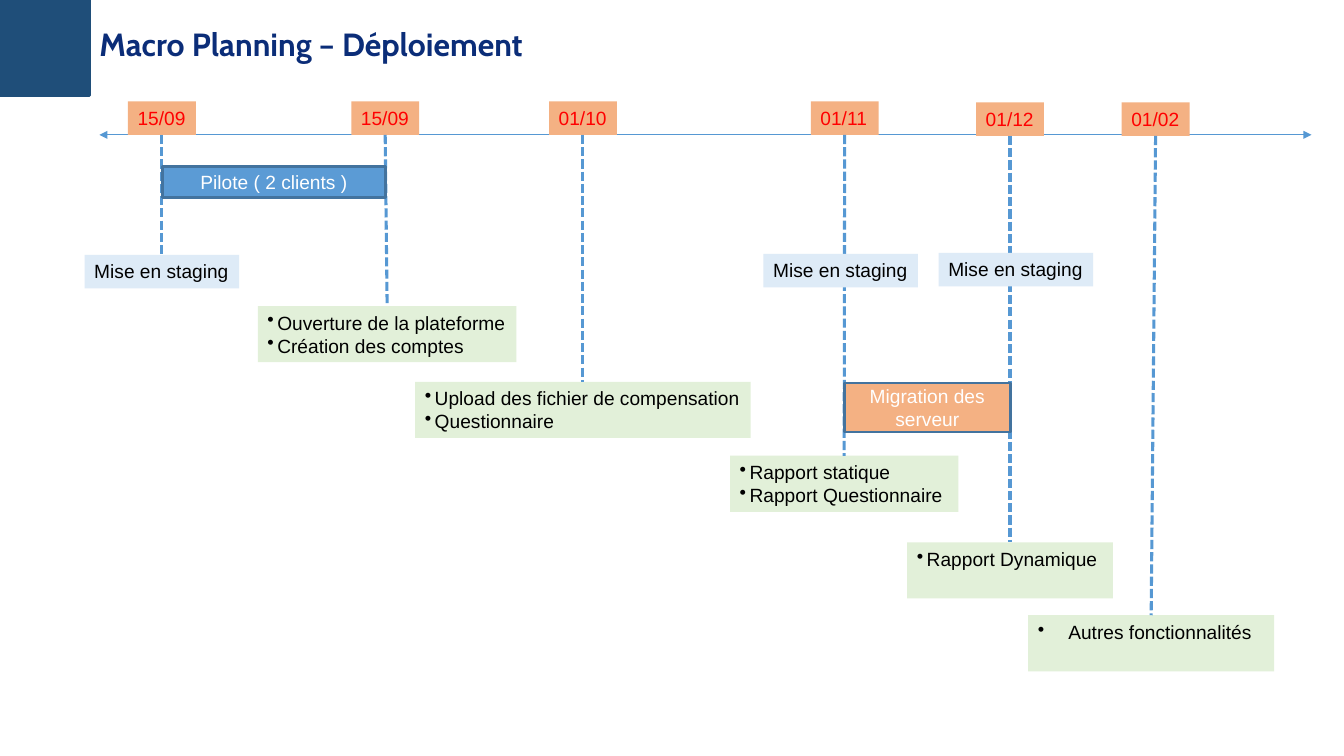
from pptx import Presentation
from pptx import util as u
from pptx.dml.color import RGBColor
from pptx.enum import dml, shapes, text
from pptx.oxml.ns import qn
from lxml import etree

BLUE, ORANGE, GREEN, PALE = "5698D3", "F4B183", "E2F0D9", "DEEBF7"
BLACK, WHITE, RED = "000000", "FFFFFF", "FF0000"

# date, left, top, note left, note top, note width, note lines, bullet indent
STEPS = [
    ("15/09", 1.3, 1.03, 0.86, 2.59, 1.57, ["Mise en staging"], 0),
    ("01/10", 5.58, 1.03, 4.22, 3.88, 3.41,
     ["Upload des fichier de compensation", "Questionnaire"], 0.1),
    ("15/09", 3.57, 1.03, 2.62, 3.11, 2.63,
     ["Ouverture de la plateforme", "Création des comptes"], 0.1),
    ("01/11", 8.24, 1.03, 7.42, 4.63, 2.32,
     ["Rapport statique", "Rapport Questionnaire"], 0.1),
    ("01/12", 9.92, 1.04, 9.22, 5.51, 2.09, ["Rapport Dynamique"], 0.1),
    ("01/02", 11.4, 1.04, 10.45, 6.25, 2.5, ["Autres fonctionnalités"], 0.31),
]
BARS = [
    ("Pilote ( 2 clients )", 1.65, 1.69, 2.27, 0.32, "5B9BD5"),
    ("Migration des serveur", 8.58, 3.89, 1.69, 0.5, ORANGE),
]
STAGING = [(7.76, 2.58), (9.54, 2.57)]


def rgb(code):
    """Turn a hex string into a colour."""
    return RGBColor.from_string(code)


def style(para, size, color, face="Arial", bold=False):
    """Format the runs of a paragraph."""
    for run in para.runs:
        font = run.font
        font.size, font.name, font.bold = u.Pt(size), face, bold
        font.color.rgb = rgb(color)


def bullet(para, indent):
    """Give a paragraph a hanging bullet."""
    props = para._p.get_or_add_pPr()
    props.set("marL", str(u.Inches(indent)))
    props.set("indent", str(-u.Inches(indent)))
    etree.SubElement(props, qn("a:buChar")).set("char", "•")


def rect(slide, box, fill, edge=None):
    """Add a plain rectangle with an optional edge."""
    shape = slide.shapes.add_shape(
        shapes.MSO_SHAPE.RECTANGLE, *map(u.Inches, box))
    shape.shadow.inherit = False
    shape.fill.solid()
    shape.fill.fore_color.rgb = rgb(fill)
    if edge:
        shape.line.color.rgb = rgb(edge)
        shape.line.width = u.Pt(2)
    else:
        shape.line.fill.background()
    return shape


def label(slide, box, fill, lines, color, indent=0):
    """Add a left-aligned box of text lines, bulleted when indented."""
    shape = rect(slide, box, fill)
    frame = shape.text_frame
    frame.word_wrap = True
    frame.margin_right = 0
    frame.vertical_anchor = text.MSO_ANCHOR.TOP
    frame.text = "\n".join(lines)
    for para in frame.paragraphs:
        para.alignment = text.PP_ALIGN.LEFT
        style(para, 14, color)
        if indent:
            bullet(para, indent)
    return shape


def bar(slide, words, left, top, width, height, fill):
    """Add a period bar with centred text."""
    shape = rect(slide, (left, top, width, height), fill, "43739E")
    frame = shape.text_frame
    frame.text = words
    frame.vertical_anchor = text.MSO_ANCHOR.MIDDLE
    frame.paragraphs[0].alignment = text.PP_ALIGN.CENTER
    style(frame.paragraphs[0], 14, WHITE)


def link(slide, ends, width):
    """Add a straight blue line without shadow."""
    line = slide.shapes.add_connector(
        shapes.MSO_CONNECTOR.STRAIGHT, *map(u.Inches, ends))
    line.line.color.rgb = rgb(BLUE)
    line.line.width = u.Pt(width)
    etree.SubElement(line._element.spPr, qn("a:effectLst"))
    return line


def axis(slide):
    """Add the time axis with an arrowhead at each end."""
    line = link(slide, (1.01, 1.37, 13.33, 1.37), 0.75)
    for end in ("a:headEnd", "a:tailEnd"):
        etree.SubElement(line.line._ln, qn(end)).set("type", "triangle")


def step(slide, date, left, top, x, y, width, lines, indent):
    """Add a date joined by a dashed line to its note."""
    day = label(slide, (left, top, 0.69, 0.34), ORANGE, [date], RED)
    height, fill = (0.57, GREEN) if indent else (0.34, PALE)
    note = label(slide, (x, y, width, height), fill, lines, BLACK, indent)
    line = link(slide, (left, top, x, y), 2.25)
    line.line.dash_style = dml.MSO_LINE.SQUARE_DOT
    line.begin_connect(day, 2)
    line.end_connect(note, 0)


def title(slide, words):
    """Place and format the title."""
    shape = slide.shapes.title
    shape.left, shape.top = u.Inches(0.91), u.Inches(0)
    shape.width, shape.height = u.Inches(11.94), u.Inches(0.93)
    frame = shape.text_frame
    frame.text = words
    frame.vertical_anchor = text.MSO_ANCHOR.MIDDLE
    frame.margin_left = frame.margin_right = u.Inches(0.1)
    frame.margin_top = frame.margin_bottom = u.Inches(0.1)
    para = frame.paragraphs[0]
    para.alignment = text.PP_ALIGN.LEFT
    para.line_spacing = 0.9
    style(para, 23.4, "0B2D78", "Cabin", True)


def main():
    """Build the deployment planning slide."""
    deck = Presentation()
    deck.slide_width, deck.slide_height = u.Inches(13.66), u.Inches(7.68)
    slide = deck.slides.add_slide(deck.slide_layouts[5])
    rect(slide, (0, 0, 0.91, 0.97), "1F4E79", "1F4E79")
    title(slide, "Macro Planning – Déploiement")
    axis(slide)
    for item in STEPS:
        step(slide, *item)
    for item in BARS:
        bar(slide, *item)
    for left, top in STAGING:
        label(slide, (left, top, 1.57, 0.34), PALE, ["Mise en staging"], BLACK)
    deck.save("out.pptx")


if __name__ == "__main__":
    main()
